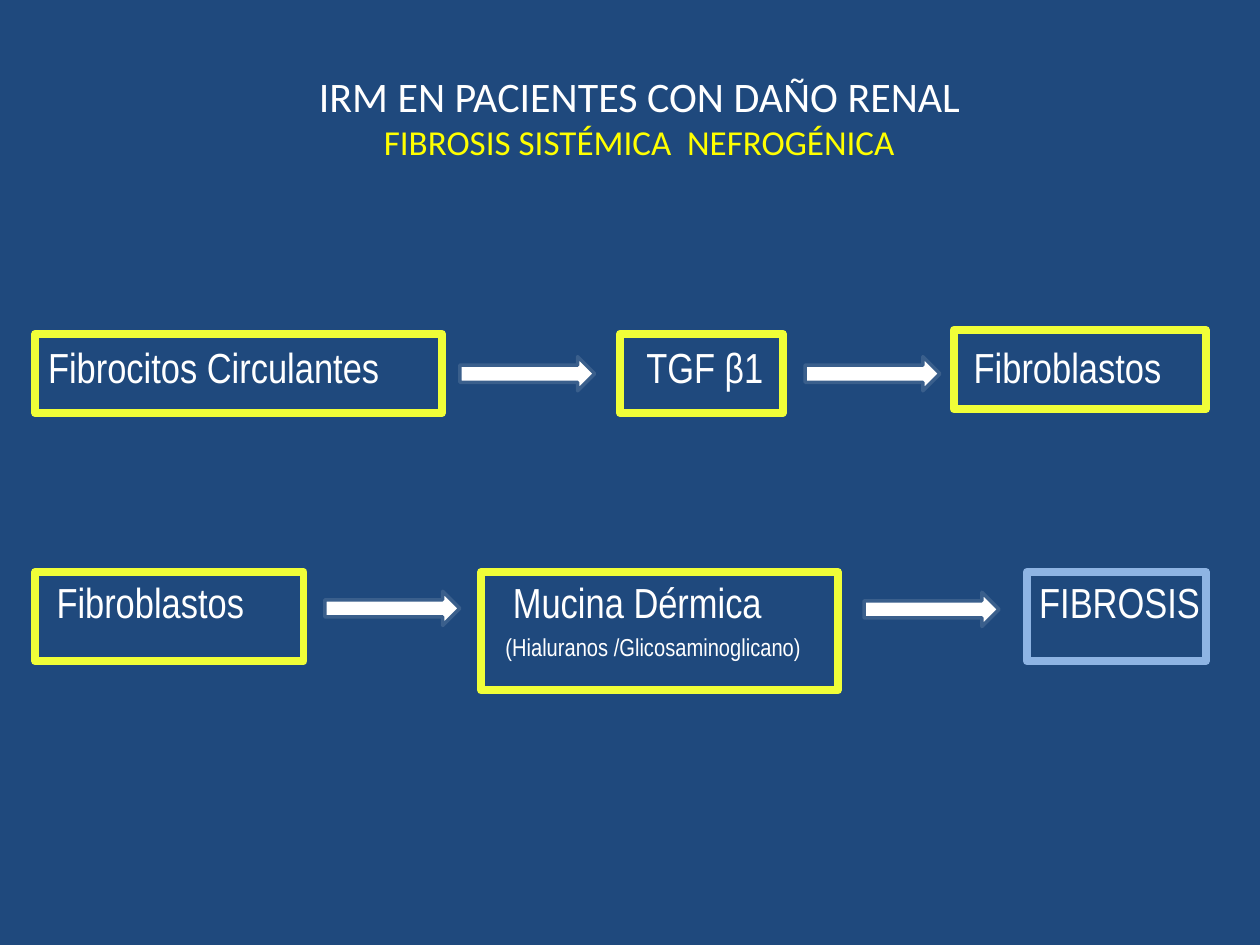
from dataclasses import dataclass

from pptx import Presentation
from pptx.dml.color import RGBColor
from pptx.enum.shapes import MSO_SHAPE
from pptx.enum.text import MSO_ANCHOR, PP_ALIGN
from pptx.util import Cm, Pt


@dataclass(frozen=True)
class Theme:
    """Colours, fonts and type sizes of the slide."""
    background: str = "1F497D"
    white: str = "FFFFFF"
    title_accent: str = "FFFF00"
    step: str = "F0FE38"
    outcome: str = "8EB4E3"
    arrow_edge: str = "3A5F8C"
    title_font: str = "Calibri"
    body_font: str = "Arial Narrow"
    title_size: int = 24
    subtitle_size: int = 20
    step_size: int = 24
    detail_size: int = 14


THEME = Theme()


def color(value):
    """Turn a hex string into a colour."""
    return RGBColor.from_string(value)


def add_span(para, text, font, size, ink, indent=0):
    """Add one formatted run, with an optional left indent in cm."""
    span = para.add_run()
    span.text = text
    span.font.name = font
    span.font.size = Pt(size)
    span.font.color.rgb = color(ink)
    if indent:
        properties = para._p.get_or_add_pPr()
        properties.set("marL", str(Cm(indent)))
        properties.set("indent", "0")


def set_title(page):
    """Place the title and write its two lines."""
    title = page.shapes.title
    title.left, title.top = Cm(1.27), Cm(0.76)
    title.width, title.height = Cm(22.86), Cm(3.18)
    frame = title.text_frame
    frame.word_wrap = True
    frame.vertical_anchor = MSO_ANCHOR.MIDDLE
    lines = [
        ("IRM EN PACIENTES CON DAÑO RENAL", THEME.title_size, THEME.white, 0.38),
        ("FIBROSIS SISTÉMICA  NEFROGÉNICA", THEME.subtitle_size, THEME.title_accent, 0),
    ]
    for index, (text, size, ink, indent) in enumerate(lines):
        para = frame.add_paragraph() if index else frame.paragraphs[0]
        para.alignment = PP_ALIGN.CENTER
        para.space_before = Pt(0)
        add_span(para, text, THEME.title_font, size, ink, indent)


def add_shape(page, kind, left, top, width, height, edge, weight):
    """Add a shape without shadow and with a coloured outline."""
    shape = page.shapes.add_shape(kind, Cm(left), Cm(top), Cm(width), Cm(height))
    shape.shadow.inherit = False
    shape.line.color.rgb = color(edge)
    shape.line.width = Pt(weight)
    return shape


def add_step(page, place, text_at, text, edge=THEME.step, detail=None):
    """Add an outlined box whose text starts at a given point."""
    left, top = place[:2]
    box = add_shape(page, MSO_SHAPE.RECTANGLE, *place, edge, 4.5)
    box.fill.background()
    frame = box.text_frame
    frame.word_wrap = True
    frame.vertical_anchor = MSO_ANCHOR.TOP
    frame.margin_left = Cm(text_at[0] - left)
    frame.margin_top = Cm(text_at[1] - top)
    frame.margin_right = frame.margin_bottom = 0
    para = frame.paragraphs[0]
    para.alignment = PP_ALIGN.LEFT
    add_span(para, text, THEME.body_font, THEME.step_size, THEME.white,
             0.15 if detail else 0)
    if detail:
        para = frame.add_paragraph()
        para.alignment = PP_ALIGN.LEFT
        para.space_before = Pt(2.8)
        add_span(para, detail, THEME.body_font, THEME.detail_size, THEME.white)


def add_arrow(page, left, top):
    """Add a white block arrow between two steps."""
    arrow = add_shape(page, MSO_SHAPE.RIGHT_ARROW, left, top, 2.72, 0.69,
                      THEME.arrow_edge, 2)
    arrow.fill.solid()
    arrow.fill.fore_color.rgb = color(THEME.white)


def main():
    """Build the slide and save it."""
    deck = Presentation()
    deck.slide_width, deck.slide_height = Cm(25.4), Cm(19.05)
    page = deck.slides.add_slide(deck.slide_layouts[5])
    page.background.fill.solid()
    page.background.fill.fore_color.rgb = color(THEME.background)
    set_title(page)

    for left, top in [(9.27, 7.19), (16.23, 7.19), (6.55, 11.92), (17.42, 11.94)]:
        add_arrow(page, left, top)

    first_text, second_text = 6.88, 11.63
    add_step(page, (0.71, 6.73, 8.2, 1.6), (0.97, first_text), "Fibrocitos Circulantes")
    add_step(page, (12.5, 6.73, 3.28, 1.6), (13.03, first_text), "TGF β1")
    add_step(page, (19.23, 6.65, 5.08, 1.6), (19.63, first_text), "Fibroblastos")
    add_step(page, (0.71, 11.53, 5.41, 1.8), (1.14, second_text), "Fibroblastos")
    add_step(page, (9.7, 11.53, 7.19, 2.39), (10.19, second_text), "Mucina Dérmica",
             detail="(Hialuranos /Glicosaminoglicano)")
    add_step(page, (20.7, 11.53, 3.61, 1.8), (20.95, second_text), "FIBROSIS",
             edge=THEME.outcome)
    deck.save("out.pptx")


main()
